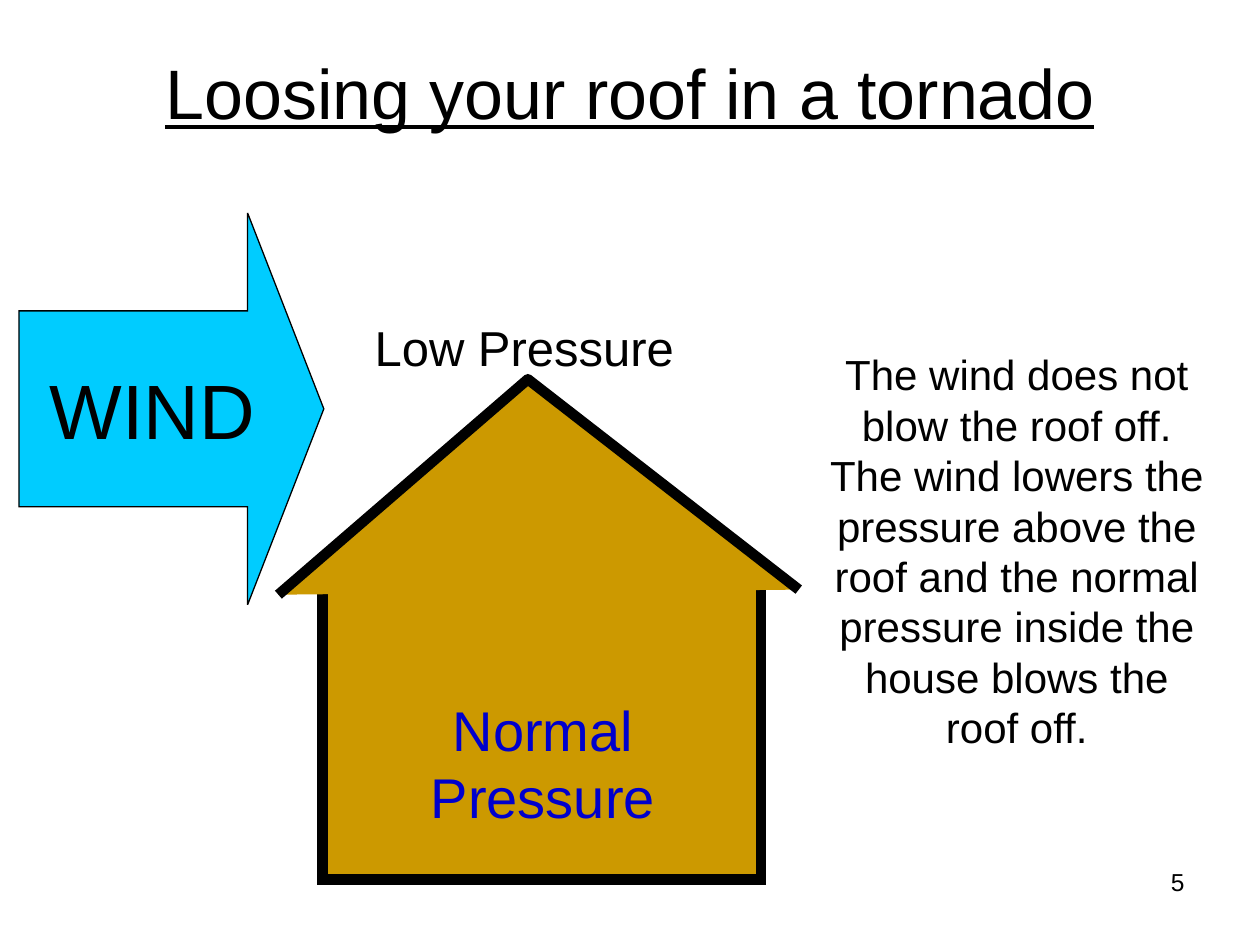
import pptx
import pptx.dml.color
import pptx.enum.shapes
import pptx.enum.text
import pptx.oxml.ns
import pptx.util
from lxml import etree
from pptx.util import Inches

ALIGN = pptx.enum.text.PP_ALIGN
ANCHOR = pptx.enum.text.MSO_ANCHOR
SHAPE = pptx.enum.shapes.MSO_SHAPE

BLACK = "000000"
BLUE = "0000CC"
OCHRE = "CC9900"
SKY = "00CCFF"


def color(value):
    return pptx.dml.color.RGBColor.from_string(value)


def style_shape(shape, fill, line_width, join):
    """Set a flat fill and a black outline with the given corner join."""
    shape.shadow.inherit = False
    shape.fill.solid()
    shape.fill.fore_color.rgb = color(fill)
    shape.line.color.rgb = color(BLACK)
    shape.line.width = pptx.util.Pt(line_width)
    line = shape.line._get_or_add_ln()
    etree.SubElement(line, pptx.oxml.ns.qn("a:" + join))


def add_preset(slide, kind, box, fill, line_width):
    shape = slide.shapes.add_shape(kind, *map(Inches, box))
    style_shape(shape, fill, line_width, "miter")
    return shape


def add_outline(slide, points, fill, line_width):
    """Draw an open outline through the points."""
    start, *others = [(Inches(x), Inches(y)) for x, y in points]
    builder = slide.shapes.build_freeform(*start)
    builder.add_line_segments(others, close=False)
    style_shape(builder.convert_to_shape(), fill, line_width, "round")


def write_text(shape, paragraphs, size, text_color=BLACK, align=ALIGN.CENTER,
               anchor=ANCHOR.TOP, wrap=False, underline=None):
    """Fill the shape; a newline within a paragraph is a line break."""
    frame = shape.text_frame
    frame.word_wrap = wrap
    frame.vertical_anchor = anchor
    for index, text in enumerate(paragraphs):
        paragraph = frame.add_paragraph() if index else frame.paragraphs[0]
        paragraph.alignment = align
        for part, line in enumerate(text.split("\n")):
            if part:
                paragraph.add_line_break()
            run = paragraph.add_run()
            run.text = line
            run.font.name = "Arial"
            run.font.size = pptx.util.Pt(size)
            run.font.color.rgb = color(text_color)
            run.font.underline = underline


def add_text(slide, box, paragraphs, size, **options):
    shape = slide.shapes.add_textbox(*map(Inches, box))
    write_text(shape, paragraphs, size, **options)


def main():
    presentation = pptx.Presentation()
    presentation.slide_width = Inches(10)
    presentation.slide_height = Inches(7.5)
    slide = presentation.slides.add_slide(presentation.slide_layouts[6])

    # Title
    add_text(slide, (0.5, 0.1, 9, 1.25), ["Loosing your roof in a tornado"], 40,
             anchor=ANCHOR.MIDDLE, wrap=True, underline=True)

    # House: walls, then roof
    add_preset(slide, SHAPE.RECTANGLE, (2.56, 4.5, 3.48, 2.48), OCHRE, 6)
    add_outline(slide, [(2.21, 4.72), (4.19, 3.01), (6.34, 4.68)], OCHRE, 6)

    # Wind arrow
    wind = add_preset(slide, SHAPE.RIGHT_ARROW, (0.15, 1.69, 2.42, 3.11), SKY, 0.75)
    wind.adjustments[0] = 0.5
    wind.adjustments[1] = 0.25
    write_text(wind, ["WIND"], 44, anchor=ANCHOR.MIDDLE)

    # Pressure labels
    add_text(slide, (2.87, 2.47, 2.58, 0.57), ["Low Pressure"], 28)
    add_text(slide, (3.32, 5.47, 1.98, 1.17), ["Normal", "Pressure"], 32,
             text_color=BLUE)

    # Slide number
    add_text(slide, (7.17, 6.83, 2.33, 0.52), ["5"], 14, align=ALIGN.RIGHT, wrap=True)

    # Explanation
    add_text(slide, (6.47, 2.72, 3.2, 3.33), [
        "The wind does not",
        "blow the roof off.",
        "The wind lowers the",
        "pressure above the\nroof and the normal",
        "pressure inside the",
        "house blows the",
        "roof off.",
    ], 24)

    presentation.save("out.pptx")


if __name__ == "__main__":
    main()
